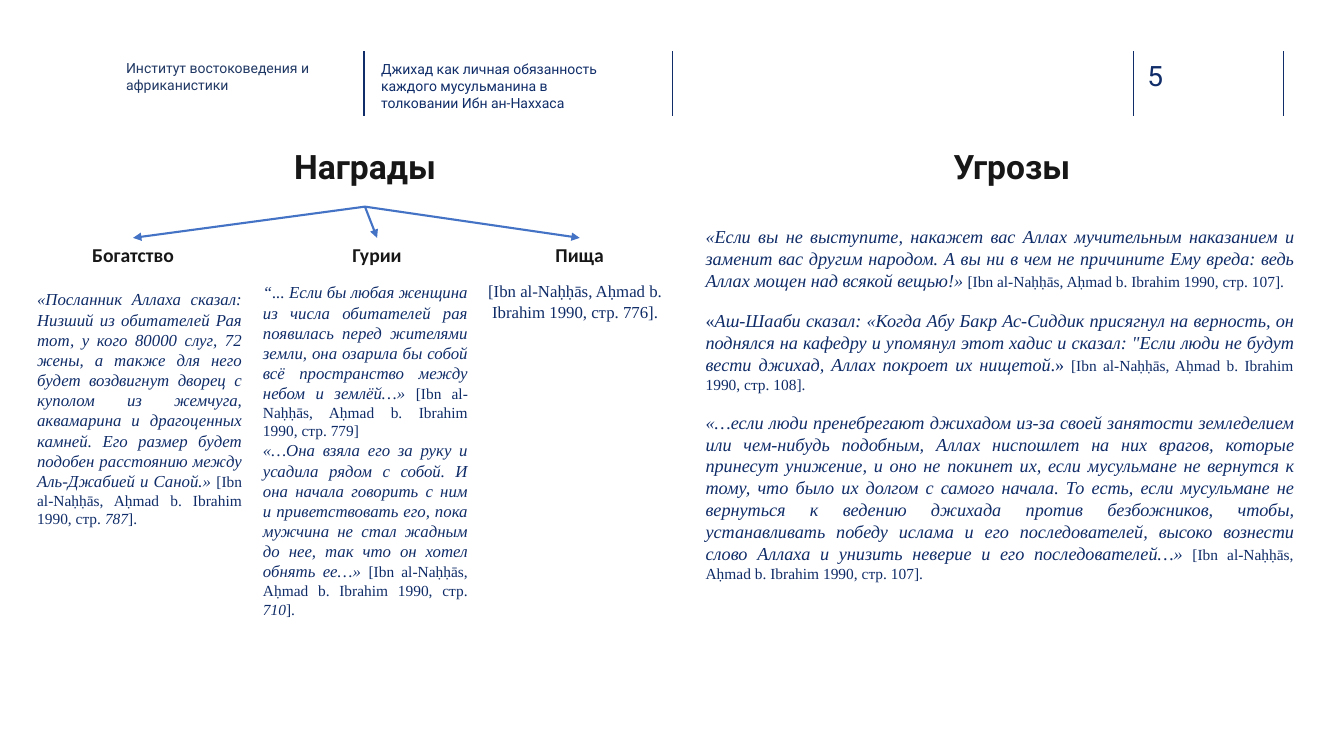
from lxml import etree
from pptx import Presentation
from pptx.dml.color import RGBColor
from pptx.enum.shapes import MSO_CONNECTOR
from pptx.enum.text import MSO_ANCHOR, MSO_AUTO_SIZE, PP_ALIGN
from pptx.oxml.ns import qn
from pptx.util import Inches, Pt

LEFT, CENTER, JUSTIFY = PP_ALIGN.LEFT, PP_ALIGN.CENTER, PP_ALIGN.JUSTIFY
TOP, NO_FIT, STRAIGHT = MSO_ANCHOR.TOP, MSO_AUTO_SIZE.NONE, MSO_CONNECTOR.STRAIGHT
COLORS = {"navy": "102D69", "quote": "0F2C68", "institute": "203864",
          "black": "181717", "arrow": "4472C4"}
SERIF = "Times New Roman"
SOURCE = "[Ibn al-Naḥḥās, Aḥmad b. Ibrahim 1990, стр. "

prs = Presentation()
prs.slide_width, prs.slide_height = Inches(13.33), Inches(7.5)
s = prs.slides.add_slide(prs.slide_layouts[3])
title, institute, topic = s.placeholders


def add_text(paragraphs, box, sp=None, font="Roboto", size=12, color="navy",
             bold=False, align=LEFT, inset=True, gap=0):
    """Fill sp, or a new text box; a run is a string or (text, size, italic)."""
    x, y, w, h = (Inches(v) for v in box)
    if sp is None:
        sp = s.shapes.add_textbox(x, y, w, h)
    sp.left, sp.top, sp.width, sp.height = x, y, w, h
    tf = sp.text_frame
    tf.word_wrap, tf.auto_size, tf.vertical_anchor = True, NO_FIT, TOP
    if not inset:
        tf.margin_left = tf.margin_right = tf.margin_top = tf.margin_bottom = 0
    if isinstance(paragraphs, str):
        paragraphs = [[paragraphs]]
    for i, runs in enumerate(paragraphs):
        p = tf.add_paragraph() if i else tf.paragraphs[0]
        if sp.is_placeholder:
            pPr = p._p.get_or_add_pPr()
            pPr.set("marL", "0")
            pPr.set("indent", "0")
            etree.SubElement(pPr, qn("a:buNone"))
        p.alignment = align
        p.space_before = Pt(gap if i else 0)
        for run in runs:
            text, run_size, italic = (run, size, False) if isinstance(run, str) else run
            r = p.add_run()
            r.text = text
            r.font.name, r.font.size = font, Pt(run_size)
            r.font.bold, r.font.italic = bold, italic
            r.font.color.rgb = RGBColor.from_string(COLORS[color])
    return sp


def add_line(x1, y1, x2, y2, color, width):
    line = s.shapes.add_connector(STRAIGHT, Inches(x1), Inches(y1), Inches(x2), Inches(y2))
    line.line.color.rgb = RGBColor.from_string(COLORS[color])
    line.line.width = Pt(width)
    etree.SubElement(line._element.spPr, qn("a:effectLst"))
    return line


# Header band
for x in (3.61, 6.67, 11.24, 12.73):
    add_line(x, 0.51, x, 1.15, "navy", 1)
add_text("Институт востоковедения и африканистики", (1.25, 0.59, 2.08, 0.45),
         sp=institute, size=10, color="institute", inset=False)
add_text("Джихад как личная обязанность каждого мусульманина в толковании Ибн ан-Наххаса",
         (3.78, 0.6, 2.26, 0.45), sp=topic, size=10, inset=False)
add_text("5", (11.38, 0.58, 0.73, 0.34), size=20, inset=False)

# Section headings
heading = dict(size=24, color="black", bold=True, align=CENTER, inset=False)
add_text("Награды", (2.74, 1.45, 1.76, 0.6), sp=title, **heading)
add_text("Угрозы", (8.72, 1.45, 2.63, 0.6), **heading)

# Reward names, each with an arrow from the heading
for name, x, w, h in (("Богатство", 0.33, 1.98, 0.48),
                      ("Гурии", 3.33, 0.82, 0.35),
                      ("Пища", 5.25, 1, 0.34)):
    reward = add_text(name, (x, 2.36, w, h), font="Calibri", size=14,
                      color="black", bold=True, align=CENTER)
    arrow = add_line(3.62, 2.05, x + w / 2, 2.36, "arrow", 1.5)
    arrow.begin_connect(title, 2)
    arrow.end_connect(reward, 0)
    etree.SubElement(arrow.line._get_or_add_ln(), qn("a:tailEnd"), type="triangle")

# Reward quotations
quote = dict(font=SERIF, color="quote", align=JUSTIFY)
add_text([[
    ("«Посланник Аллаха сказал: Низший из обитателей Рая тот, у кого 80000 слуг, 72 жены, "
     "а также для него будет воздвигнут дворец с куполом из жемчуга, аквамарина и "
     "драгоценных камней. Его размер будет подобен расстоянию между Аль-Джабией и Саной.» ",
     12, True),
    (SOURCE, 11, False), ("787", 11, True), ("].", 11, False),
]], (0.27, 2.82, 2.23, 2.83), **quote)
add_text([[
    ("“... Если бы любая женщина из числа обитателей рая появилась перед жителями земли, "
     "она озарила бы собой всё пространство между небом и землёй…» ", 12, True),
    (SOURCE + "779]", 11, False),
], [
    ("«…Она взяла его за руку и усадила рядом с собой. И она начала говорить с ним и "
     "приветствовать его, пока мужчина не стал жадным до нее, так что он хотел обнять ее…» ",
     12, True),
    (SOURCE, 11, False), ("710", 11, True), ("].", 11, False),
]], (2.51, 2.75, 2.23, 3.53), **quote)
add_text(SOURCE + "776].", (4.59, 2.74, 2.23, 0.5), font=SERIF, color="quote", align=CENTER)

# Threat quotations
add_text([[
    ("«Если вы не выступите, накажет вас Аллах мучительным наказанием и заменит вас другим "
     "народом. А вы ни в чем не причините Ему вреда: ведь Аллах мощен над всякой вещью!» ",
     13, True),
    (SOURCE + "107].", 11, False),
], [
    ("«", 13, False),
    ("Аш-Шааби сказал: «Когда Абу Бакр Ас-Сиддик присягнул на верность, он поднялся на "
     "кафедру и упомянул этот хадис и сказал: \"Если люди не будут вести джихад, Аллах "
     "покроет их нищетой", 13, True),
    (".» ", 13, False),
    (SOURCE + "108].", 11, False),
], [
    ("«…если люди пренебрегают джихадом из-за своей занятости земледелием или чем-нибудь "
     "подобным, Аллах ниспошлет на них врагов, которые принесут унижение, и оно не покинет "
     "их, если мусульмане не вернутся к тому, что было их долгом с самого начала. То есть, "
     "если мусульмане не вернуться к ведению джихада против безбожников, чтобы, "
     "устанавливать победу ислама и его последователей, высоко вознести слово Аллаха и "
     "унизить неверие и его последователей…» ", 13, True),
    (SOURCE + "107].", 11, False),
]], (6.9, 2.19, 6.03, 4.64), gap=12.7, **quote)

prs.save("out.pptx")
